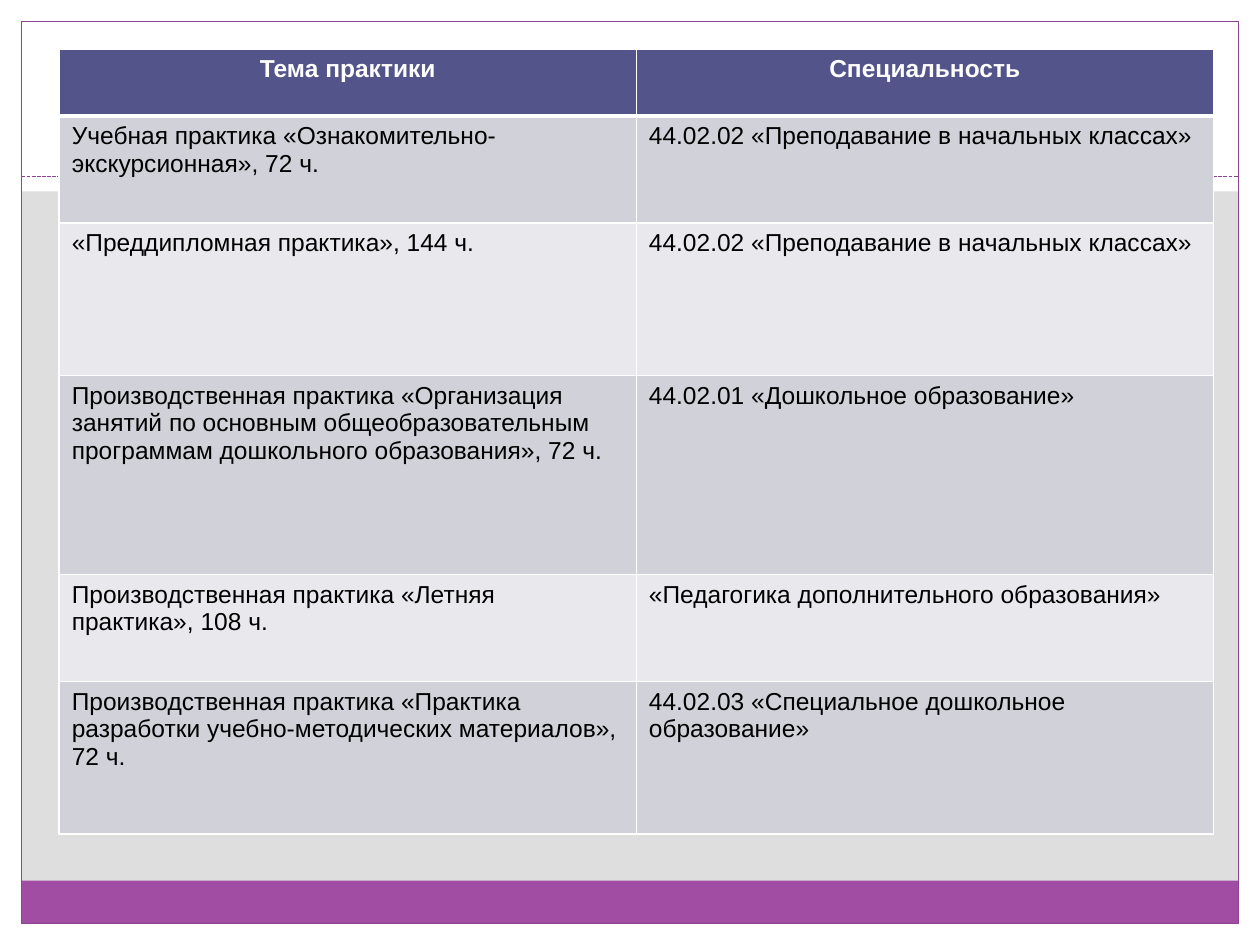
from lxml.etree import SubElement
from pptx import Presentation
from pptx.dml.color import RGBColor
from pptx.enum.dml import MSO_LINE
from pptx.enum.shapes import MSO_CONNECTOR, MSO_SHAPE
from pptx.enum.text import PP_ALIGN
from pptx.oxml.ns import qn
from pptx.util import Inches, Pt

WIDE, HIGH = 10, 7.5
EDGE = 0.17
COLORS = {
    "page": "DEDEDE",
    "white": "FFFFFF",
    "bar": "A04DA3",
    "line": "8D4490",
    "head": "53548A",
    "dark": "D1D1DA",
    "light": "E9E9ED",
    "text": "000000",
}
COLS = [4.58, 4.58]
ROWS = [0.53, 0.85, 1.21, 1.58, 0.85, 1.21]
CELLS = [
    ("Тема практики", "Специальность"),
    ("Учебная практика «Ознакомительно-экскурсионная», 72 ч.",
     "44.02.02 «Преподавание в начальных классах»"),
    ("«Преддипломная практика», 144 ч.",
     "44.02.02 «Преподавание в начальных классах»"),
    ("Производственная практика «Организация занятий по основным "
     "общеобразовательным программам дошкольного образования», 72 ч.",
     "44.02.01 «Дошкольное образование»"),
    ("Производственная практика «Летняя практика», 108 ч.",
     "«Педагогика дополнительного образования»"),
    ("Производственная практика «Практика разработки "
     "учебно-методических материалов», 72 ч.",
     "44.02.03 «Специальное дошкольное образование»"),
]


def color(name):
    return RGBColor.from_string(COLORS[name])


def paint(fill, name):
    fill.solid()
    fill.fore_color.rgb = color(name)


def stroke(line):
    line.color.rgb = color("line")
    line.width = Pt(0.75)


def add_box(slide, place, fill=None):
    box = slide.shapes.add_shape(MSO_SHAPE.RECTANGLE, *map(Inches, place))
    box.shadow.inherit = False
    if fill:
        paint(box.fill, fill)
        box.line.fill.background()
    else:
        box.fill.background()
        stroke(box.line)


def add_rule(slide, top):
    ends = map(Inches, (EDGE, top, WIDE - EDGE, top))
    rule = slide.shapes.add_connector(MSO_CONNECTOR.STRAIGHT, *ends)
    SubElement(rule.element.spPr, qn("a:effectLst"))
    stroke(rule.line)
    rule.line.dash_style = MSO_LINE.SQUARE_DOT
    rule.line.dash_style = MSO_LINE.SQUARE_DOT
    rule.line.fill


def add_edge(cell, side, width):
    props = cell._tc.get_or_add_tcPr()
    edge = SubElement(props, qn(f"a:ln{side}"), w=str(Pt(width)))
    fill = SubElement(edge, qn("a:solidFill"))
    SubElement(fill, qn("a:srgbClr"), val=COLORS["white"])


def fill_cell(cell, text, row):
    head = row == 0
    thick = {"T": row == 1, "B": head}
    for side in "LRTB":
        add_edge(cell, side, 3 if thick.get(side) else 1)
    paint(cell.fill, "head" if head else "dark" if row % 2 else "light")
    cell.text = text
    para = cell.text_frame.paragraphs[0]
    para.alignment = PP_ALIGN.CENTER if head else PP_ALIGN.LEFT
    para.font.name = "Arial"
    para.font.size = Pt(14)
    para.font.bold = head
    para.font.color.rgb = color("white" if head else "text")


def add_grid(slide, left, top):
    place = map(Inches, (left, top, sum(COLS), sum(ROWS)))
    table = slide.shapes.add_table(len(ROWS), len(COLS), *place).table
    for col, width in zip(table.columns, COLS):
        col.width = Inches(width)
    for row, high in enumerate(ROWS):
        table.rows[row].height = Inches(high)
        for col, text in enumerate(CELLS[row]):
            fill_cell(table.cell(row, col), text, row)


def add_frame(slide):
    paint(slide.background.fill, "page")
    for place in (
        (0, HIGH - EDGE, WIDE, EDGE),
        (0, 0, WIDE, 1.52),
        (0, 0, EDGE, HIGH),
        (WIDE - EDGE, 0, EDGE, HIGH),
    ):
        add_box(slide, place, "white")
    inner = WIDE - 2 * EDGE
    add_box(slide, (EDGE, 6.99, inner, 0.34), "bar")
    add_box(slide, (EDGE, EDGE, inner, HIGH - 2 * EDGE))
    add_rule(slide, 1.4)


def main():
    deck = Presentation()
    deck.slide_width, deck.slide_height = Inches(WIDE), Inches(HIGH)
    slide = deck.slides.add_slide(deck.slide_layouts[6])
    add_frame(slide)
    add_grid(slide, 0.47, 0.39)
    deck.save("out.pptx")


if __name__ == "__main__":
    main()
